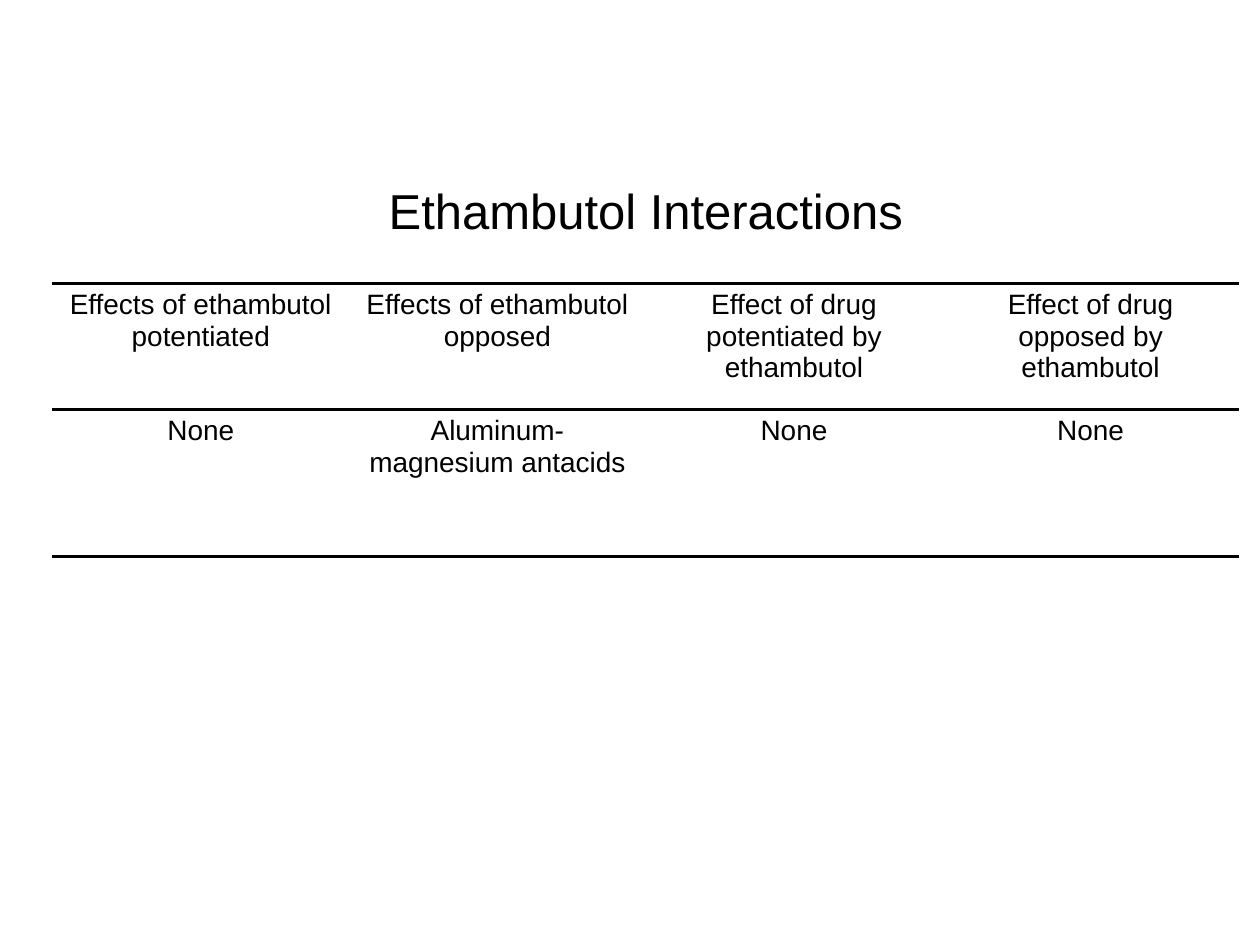
from lxml import etree
from pptx import Presentation
from pptx.dml.color import RGBColor
from pptx.enum.text import MSO_ANCHOR as Anchor, PP_ALIGN as Align
from pptx.oxml.ns import qn
from pptx.util import Pt

INK = "000000"
TITLE = "Ethambutol Interactions"
HEADS = [
    "Effects of ethambutol potentiated",
    "Effects of ethambutol opposed",
    "Effect of drug potentiated by ethambutol",
    "Effect of drug opposed by ethambutol",
]
DRUGS = ["None", "Aluminum-magnesium antacids", "None", "None"]


def color(code):
    return RGBColor.from_string(code)


def write(frame, text, size=16, font="Arial", ink=INK, align=Align.CENTER):
    para = frame.paragraphs[0]
    para.alignment = align
    run = para.add_run()
    run.text = text
    run.font.size = Pt(size)
    run.font.name = font
    run.font.bold = False
    run.font.color.rgb = color(ink)


def border(cell, rules, width=2.25, ink=INK):
    """Rule the named sides (L, R, T, B) and clear the others."""
    props = cell._tc.get_or_add_tcPr()
    for i, side in enumerate("LRTB"):
        line = etree.Element(qn("a:ln" + side))
        if side in rules:
            line.set("w", str(Pt(width)))
            fill = etree.SubElement(line, qn("a:solidFill"))
            etree.SubElement(fill, qn("a:srgbClr"), val=ink)
        else:
            etree.SubElement(line, qn("a:noFill"))
        props.insert(i, line)


def add_grid(slide, left, top, width, heights):
    rows = [[TITLE], HEADS, DRUGS]
    count = len(HEADS)
    frame = slide.shapes.add_table(
        len(rows), count, Pt(left), Pt(top), Pt(width), Pt(sum(heights)))
    table = frame.table
    table.first_row = table.horz_banding = False
    for col in table.columns:
        col.width = Pt(width / count)
    for row, height in zip(table.rows, heights):
        row.height = Pt(height)

    # Rules under every row, none above the title
    for r in range(len(rows)):
        for c in range(count):
            cell = table.cell(r, c)
            cell.fill.background()
            cell.vertical_anchor = Anchor.TOP
            border(cell, "TB" if r else "B")

    # Title spans all columns
    table.cell(0, 0).merge(table.cell(0, count - 1))
    for r, texts in enumerate(rows):
        for c, text in enumerate(texts):
            write(table.cell(r, c).text_frame, text, size=16 if r else 28)


def main():
    deck = Presentation()
    deck.slide_width, deck.slide_height = Pt(720), Pt(540)
    slide = deck.slides.add_slide(deck.slide_layouts[6])
    add_grid(slide, 30, 102, 678, [60, 72, 84])
    deck.save("out.pptx")


if __name__ == "__main__":
    main()
